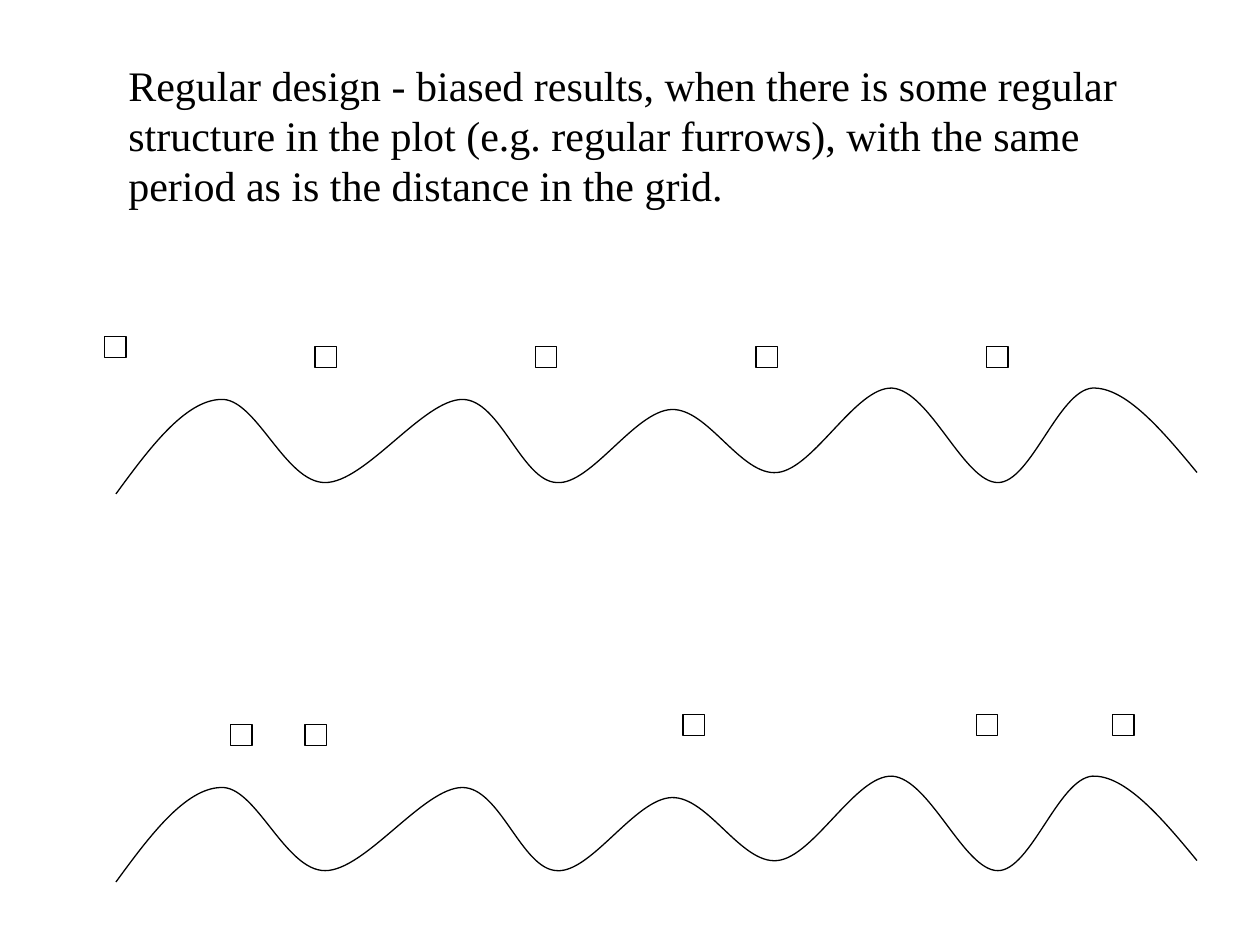
"""Build a slide comparing regular and random plots over a furrowed field."""
import pptx
import pptx.dml.color
import pptx.enum.shapes
import pptx.enum.text
import pptx.oxml.ns
import pptx.util
import lxml.etree

Inches = pptx.util.Inches
COLORS = {"ink": "000000", "paper": "FFFFFF"}
FONT = {"name": "Times New Roman", "size": pptx.util.Pt(24)}
FRAME = {
    "word_wrap": True,
    "auto_size": pptx.enum.text.MSO_AUTO_SIZE.SHAPE_TO_FIT_TEXT,
}
TEXT = (
    "Regular design - biased results, when there is some regular structure "
    "in the plot (e.g. regular furrows), with the same period as is the "
    "distance in the grid."
)
SIDE = 0.17
START = (0.92, 3.92)
CURVES = [
    ((1.19, 3.55), (1.47, 3.18), (1.75, 3.17)),
    ((2.03, 3.15), (2.26, 3.83), (2.58, 3.83)),
    ((2.9, 3.83), (3.36, 3.17), (3.67, 3.17)),
    ((3.97, 3.17), (4.14, 3.82), (4.42, 3.83)),
    ((4.69, 3.85), (5.04, 3.26), (5.33, 3.25)),
    ((5.62, 3.24), (5.88, 3.78), (6.17, 3.75)),
    ((6.46, 3.72), (6.79, 3.07), (7.08, 3.08)),
    ((7.38, 3.1), (7.65, 3.83), (7.92, 3.83)),
    ((8.18, 3.83), (8.4, 3.1), (8.67, 3.08)),
    ((8.93, 3.07), (9.22, 3.41), (9.5, 3.75)),
]
WAVES = [0, 3.08]
PLOTS = [
    (2.5, 2.75), (4.25, 2.75), (6, 2.75), (0.83, 2.67), (7.83, 2.75),
    (8.83, 5.67), (7.75, 5.67), (5.42, 5.67), (2.42, 5.75), (1.83, 5.75),
]


def color(name):
    return pptx.dml.color.RGBColor.from_string(COLORS[name])


def bend(shape):
    """Turn each three line segments of a freeform into one cubic curve."""
    qn = pptx.oxml.ns.qn
    lines = list(shape.element.iter(qn("a:lnTo")))
    for n in range(0, len(lines), 3):
        curve = lxml.etree.Element(qn("a:cubicBezTo"))
        lines[n].addprevious(curve)
        for line in lines[n:n + 3]:
            curve.append(line[0])
            line.getparent().remove(line)


class Board:
    """Hold the slide and draw its elements in one style."""

    def __init__(self, slide):
        self.slide = slide

    def style(self, shape, fill=None):
        shape.shadow.inherit = False
        if fill:
            shape.fill.solid()
            shape.fill.fore_color.rgb = color(fill)
        else:
            shape.fill.background()
        shape.line.color.rgb = color("ink")
        shape.line.width = pptx.util.Pt(0.75)

    def text(self, words, *box):
        frame = self.slide.shapes.add_textbox(*map(Inches, box)).text_frame
        for key, value in FRAME.items():
            setattr(frame, key, value)
        frame.text = words
        font = frame.paragraphs[0].runs[0].font
        for key, value in FONT.items():
            setattr(font, key, value)
        font.color.rgb = color("ink")

    def wave(self, drop):
        points = [START, *(point for curve in CURVES for point in curve)]
        first, *rest = [(Inches(x), Inches(y + drop)) for x, y in points]
        pen = self.slide.shapes.build_freeform(*first)
        pen.add_line_segments(rest, close=False)
        shape = pen.convert_to_shape()
        bend(shape)
        self.style(shape)

    def plot(self, left, top):
        kind = pptx.enum.shapes.MSO_SHAPE.RECTANGLE
        box = map(Inches, (left, top, SIDE, SIDE))
        self.style(self.slide.shapes.add_shape(kind, *box), "paper")


def main():
    deck = pptx.Presentation()
    deck.slide_width, deck.slide_height = Inches(10), Inches(7.5)
    board = Board(deck.slides.add_slide(deck.slide_layouts[6]))
    board.text(TEXT, 0.92, 0.42, 8.33, 1.31)
    for drop in WAVES:
        board.wave(drop)
    for spot in PLOTS:
        board.plot(*spot)
    deck.save("out.pptx")


if __name__ == "__main__":
    main()
